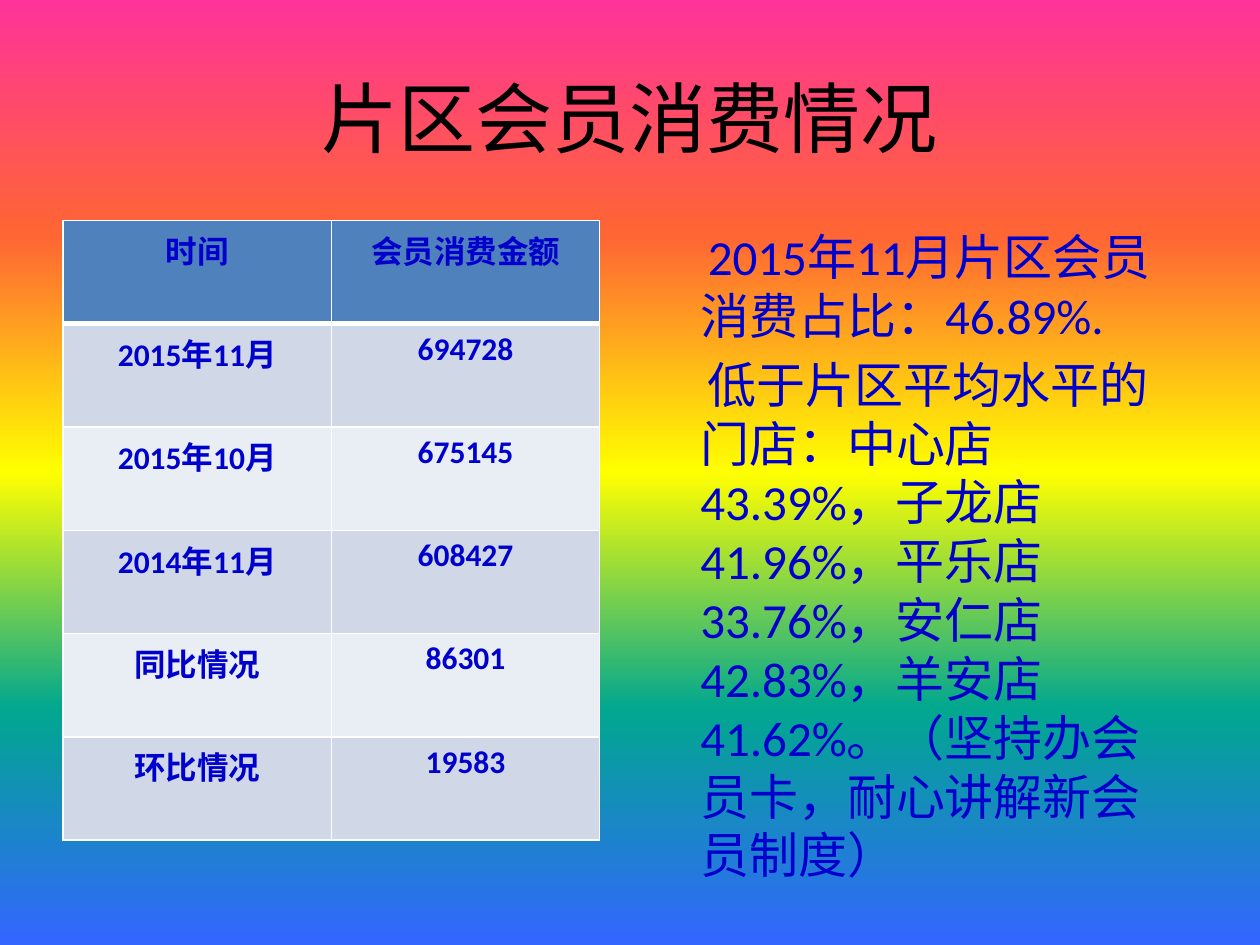
import lxml.etree
import pptx
import pptx.dml.color
import pptx.enum.text
import pptx.oxml.ns
import pptx.util
from pptx.util import Inches

theme = {
    "font": "Calibri",
    "title": "000000",
    "accent": "0000CC",
    "header": "4F81BD",
    "bands": ["D0D8E8", "E9EDF4"],
    "border": "FFFFFF",
    "background": ["FF3399", "FF6633", "FFFF00", "01A78F", "3366FF"],
    "title_size": 44,
    "body_size": 28,
    "table_size": 18,
}
qn = pptx.oxml.ns.qn
rgb = pptx.dml.color.RGBColor.from_string
CENTER = pptx.enum.text.PP_ALIGN.CENTER
LEFT = pptx.enum.text.PP_ALIGN.LEFT


def write(paragraph, text, size, color, bold=False, align=CENTER):
    paragraph.alignment = align
    run = paragraph.add_run()
    run.text = text
    run.font.name = theme["font"]
    run.font.size = pptx.util.Pt(size)
    run.font.bold = bold
    run.font.color.rgb = rgb(color)


def add_border(cell, side, width):
    line = lxml.etree.SubElement(
        cell._tc.get_or_add_tcPr(), qn(f"a:ln{side}"), w=str(pptx.util.Pt(width))
    )
    fill = lxml.etree.SubElement(line, qn("a:solidFill"))
    lxml.etree.SubElement(fill, qn("a:srgbClr"), val=theme["border"])


deck = pptx.Presentation()
deck.slide_width = Inches(10)
deck.slide_height = Inches(7.5)
slide = deck.slides.add_slide(deck.slide_layouts[5])

background = slide.background.fill
background.gradient()
background.gradient_angle = 270
stops = slide.element.find(".//" + qn("a:gsLst"))
for stop in list(stops):
    stops.remove(stop)
for index, color in enumerate(theme["background"]):
    stop = lxml.etree.SubElement(stops, qn("a:gs"), pos=str(index * 25000))
    lxml.etree.SubElement(stop, qn("a:srgbClr"), val=color)

title = slide.shapes.title
title.left, title.top = Inches(0.5), Inches(0.3)
title.width, title.height = Inches(9), Inches(1.25)
title.text_frame.vertical_anchor = pptx.enum.text.MSO_ANCHOR.MIDDLE
write(title.text_frame.paragraphs[0], "片区会员消费情况",
      size=theme["title_size"], color=theme["title"])

spending = [
    ("时间", "会员消费金额"),
    ("2015年11月", "694728"),
    ("2015年10月", "675145"),
    ("2014年11月", "608427"),
    ("同比情况", "86301"),
    ("环比情况", "19583"),
]
spending_table = slide.shapes.add_table(
    len(spending), 2, Inches(0.5), Inches(1.75), Inches(4.26), Inches(4.92)
).table
for row, values in enumerate(spending):
    for column, value in enumerate(values):
        cell = spending_table.cell(row, column)
        cell.margin_left = cell.margin_right = Inches(0.04)
        cell.margin_top = cell.margin_bottom = Inches(0.05)
        widths = {"L": 1, "R": 1, "T": 3 if row == 1 else 1, "B": 3 if row == 0 else 1}
        for side, width in widths.items():
            add_border(cell, side, width)
        cell.fill.solid()
        cell.fill.fore_color.rgb = rgb(
            theme["bands"][(row - 1) % 2] if row else theme["header"]
        )
        write(cell.text_frame.paragraphs[0], value,
              size=theme["table_size"], color=theme["accent"], bold=True)

findings = [
    "2015年11月片区会员消费占比：46.89%.",
    "低于片区平均水平的门店：中心店43.39%，子龙店41.96%，平乐店33.76%，"
    "安仁店42.83%，羊安店41.62%。（坚持办会员卡，耐心讲解新会员制度）",
]
commentary = slide.shapes.add_textbox(
    Inches(5.08), Inches(1.75), Inches(4.42), Inches(4.95)
).text_frame
commentary.word_wrap = True
for index, finding in enumerate(findings):
    paragraph = commentary.add_paragraph() if index else commentary.paragraphs[0]
    paragraph.space_before = pptx.util.Pt(theme["body_size"] * 0.2)
    write(paragraph, finding, size=theme["body_size"], color=theme["accent"], align=LEFT)
    indent = paragraph._p.get_or_add_pPr()
    indent.set("marL", str(Inches(0.38)))
    indent.set("indent", str(Inches(0.06)))

deck.save("out.pptx")
